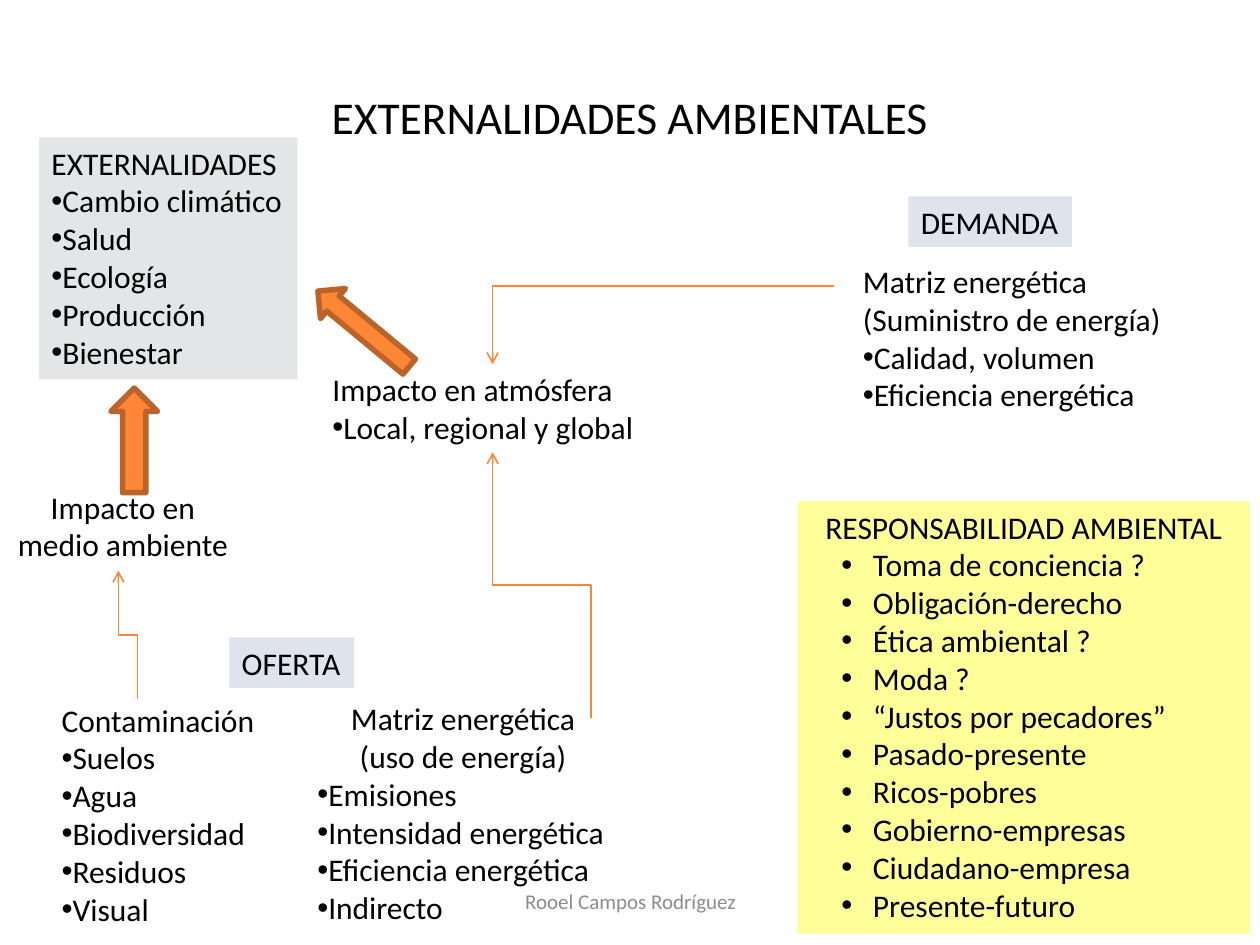
from dataclasses import dataclass
from typing import Optional

from lxml.etree import SubElement
from pptx import Presentation
from pptx.dml.color import RGBColor
from pptx.enum.shapes import MSO_CONNECTOR, MSO_SHAPE
from pptx.enum.text import MSO_ANCHOR, MSO_AUTO_SIZE, PP_ALIGN
from pptx.oxml.ns import qn
from pptx.util import Inches, Pt


@dataclass(frozen=True)
class Theme:
    font: str = "Calibri"
    title: float = 26
    body: float = 18
    footer: float = 12
    text: str = "000000"
    muted: str = "8C8C8C"
    label: str = "DFE3EE"
    effects: str = "E4E5E6"
    duty: str = "FFFF99"
    accent: str = "FE8637"
    accent_dark: str = "BC6329"
    thin: float = 0.9
    thick: float = 3.15


T = Theme()


@dataclass(frozen=True)
class Box:
    at: tuple[float, float, float, float]
    heading: tuple[str, ...]
    bullets: tuple[str, ...] = ()
    fill: Optional[str] = None
    wrap: bool = False
    centered: bool = False
    middle: bool = False
    margin: float = 0
    hanging: float = 0
    size: float = T.body
    color: str = T.text


@dataclass(frozen=True)
class Elbow:
    begin: tuple[float, float]
    end: tuple[float, float]
    upward: bool = True


@dataclass(frozen=True)
class BlockArrow:
    at: tuple[float, float, float, float]
    rotation: float


BOXES = (
    Box((1.82, 5.06, 0.99, 0.4), ("OFERTA",), fill=T.label),
    Box((7.21, 1.56, 1.3, 0.4), ("DEMANDA",), fill=T.label),
    Box((0.39, 5.5, 2.01, 1.92), ("Contaminación",),
        ("Suelos", "Agua", "Biodiversidad", "Residuos", "Visual"), middle=True),
    Box((2.42, 5.5, 2.51, 1.92), ("Matriz energética", "(uso de energía)"),
        ("Emisiones", "Intensidad energética", "Eficiencia energética", "Indirecto"),
        wrap=True, centered=True),
    Box((6.75, 2.03, 2.6, 1.31), ("Matriz energética", "(Suministro de energía)"),
        ("Calidad, volumen", "Eficiencia energética")),
    Box((2.54, 2.89, 2.7, 0.71), ("Impacto en atmósfera",),
        ("Local, regional y global",)),
    Box((0, 3.82, 1.95, 0.71), ("Impacto en medio ambiente",), wrap=True, centered=True),
    Box((0.31, 1.09, 2.05, 1.92), ("EXTERNALIDADES",),
        ("Cambio climático", "Salud", "Ecología", "Producción", "Bienestar"),
        fill=T.effects),
    Box((6.33, 3.98, 3.59, 3.43), ("RESPONSABILIDAD AMBIENTAL",),
        ("Toma de conciencia ?", "Obligación-derecho", "Ética ambiental ?", "Moda ?",
         "“Justos por pecadores”", "Pasado-presente", "Ricos-pobres",
         "Gobierno-empresas", "Ciudadano-empresa", "Presente-futuro"),
        fill=T.duty, wrap=True, centered=True, margin=0.5, hanging=0.25),
    Box((3.42, 6.95, 3.17, 0.4), ("Rooel Campos Rodríguez",), wrap=True,
        centered=True, middle=True, size=T.footer, color=T.muted),
)
ELBOWS = (
    Elbow((4.69, 5.7), (3.91, 3.59)),
    Elbow((6.62, 2.27), (3.91, 2.89), upward=False),
    Elbow((1.09, 5.55), (0.94, 4.53)),
)
BLOCK_ARROWS = (
    BlockArrow((2.73, 2.14, 0.31, 0.94), 129.6),
    BlockArrow((0.88, 3.08, 0.37, 0.83), 180),
)


def rgb(value: str) -> RGBColor:
    return RGBColor.from_string(value)


def set_all(target, formats: dict) -> None:
    for name, value in formats.items():
        setattr(target, name, value)


def place(sp, at) -> None:
    set_all(sp, dict(zip(("left", "top", "width", "height"), map(Inches, at))))


def write(p, text: str, size: float, color: str, align) -> None:
    p.alignment = align
    r = p.add_run()
    r.text = text
    set_all(r.font, {"name": T.font, "size": Pt(size)})
    r.font.color.rgb = rgb(color)


def add_bullet(p, margin: float, hanging: float) -> None:
    pPr = p._p.get_or_add_pPr()
    pPr.set("marL", str(Inches(margin)))
    pPr.set("indent", str(-Inches(hanging)))
    SubElement(pPr, qn("a:buFont"), typeface="Arial")
    SubElement(pPr, qn("a:buChar"), char="•")


def add_box(slide, box: Box) -> None:
    sp = slide.shapes.add_textbox(*map(Inches, box.at))
    if box.fill:
        sp.fill.solid()
        sp.fill.fore_color.rgb = rgb(box.fill)
    tf = sp.text_frame
    set_all(tf, {
        "word_wrap": box.wrap,
        "auto_size": MSO_AUTO_SIZE.SHAPE_TO_FIT_TEXT if box.size == T.body
        else MSO_AUTO_SIZE.NONE,
        "vertical_anchor": MSO_ANCHOR.MIDDLE if box.middle else MSO_ANCHOR.TOP,
    })
    for i, text in enumerate(box.heading + box.bullets):
        p = tf.add_paragraph() if i else tf.paragraphs[0]
        is_bullet = i >= len(box.heading)
        centered = box.centered and not is_bullet
        write(p, text, box.size, box.color,
              PP_ALIGN.CENTER if centered else PP_ALIGN.LEFT)
        if is_bullet:
            add_bullet(p, box.margin, box.hanging)


def add_elbow(slide, elbow: Elbow) -> None:
    """Draw a vertical three-part elbow, or a single turn if not upward."""
    (x1, y1), (x2, y2) = elbow.begin, elbow.end
    if elbow.upward:
        # Lay the connector on its side; a 270° turn makes it stand upright.
        cx, cy = (x1 + x2) / 2, (y1 + y2) / 2
        half_w, half_h = (y1 - y2) / 2, (x1 - x2) / 2
        x1, y1, x2, y2 = cx - half_w, cy + half_h, cx + half_w, cy - half_h
    cxn = slide.shapes.add_connector(MSO_CONNECTOR.ELBOW, *map(Inches, (x1, y1, x2, y2)))
    spPr = cxn._element.spPr
    if elbow.upward:
        spPr.find(qn("a:xfrm")).set("rot", str(270 * 60000))
    else:
        spPr.find(qn("a:prstGeom")).set("prst", "bentConnector2")
    cxn.line.width = Pt(T.thin)
    cxn.line.color.rgb = rgb(T.accent)
    SubElement(spPr.find(qn("a:ln")), qn("a:tailEnd"), type="arrow")
    SubElement(spPr, qn("a:effectLst"))


def add_block_arrow(slide, arrow: BlockArrow) -> None:
    sp = slide.shapes.add_shape(MSO_SHAPE.DOWN_ARROW, *map(Inches, arrow.at))
    sp.rotation = arrow.rotation
    sp.shadow.inherit = False
    sp.fill.solid()
    sp.fill.fore_color.rgb = rgb(T.accent)
    sp.line.width = Pt(T.thick)
    sp.line.color.rgb = rgb(T.accent_dark)


def main() -> None:
    prs = Presentation()
    set_all(prs, {"slide_width": Inches(10), "slide_height": Inches(7.5)})
    slide = prs.slides.add_slide(prs.slide_layouts[5])
    title = slide.shapes.title
    place(title, (0.5, 0.3, 9, 1.25))
    title.text_frame.vertical_anchor = MSO_ANCHOR.MIDDLE
    write(title.text_frame.paragraphs[0], "EXTERNALIDADES AMBIENTALES",
          T.title, T.text, PP_ALIGN.CENTER)
    for draw, items in ((add_box, BOXES), (add_elbow, ELBOWS),
                        (add_block_arrow, BLOCK_ARROWS)):
        for item in items:
            draw(slide, item)
    prs.save("out.pptx")


if __name__ == "__main__":
    main()
